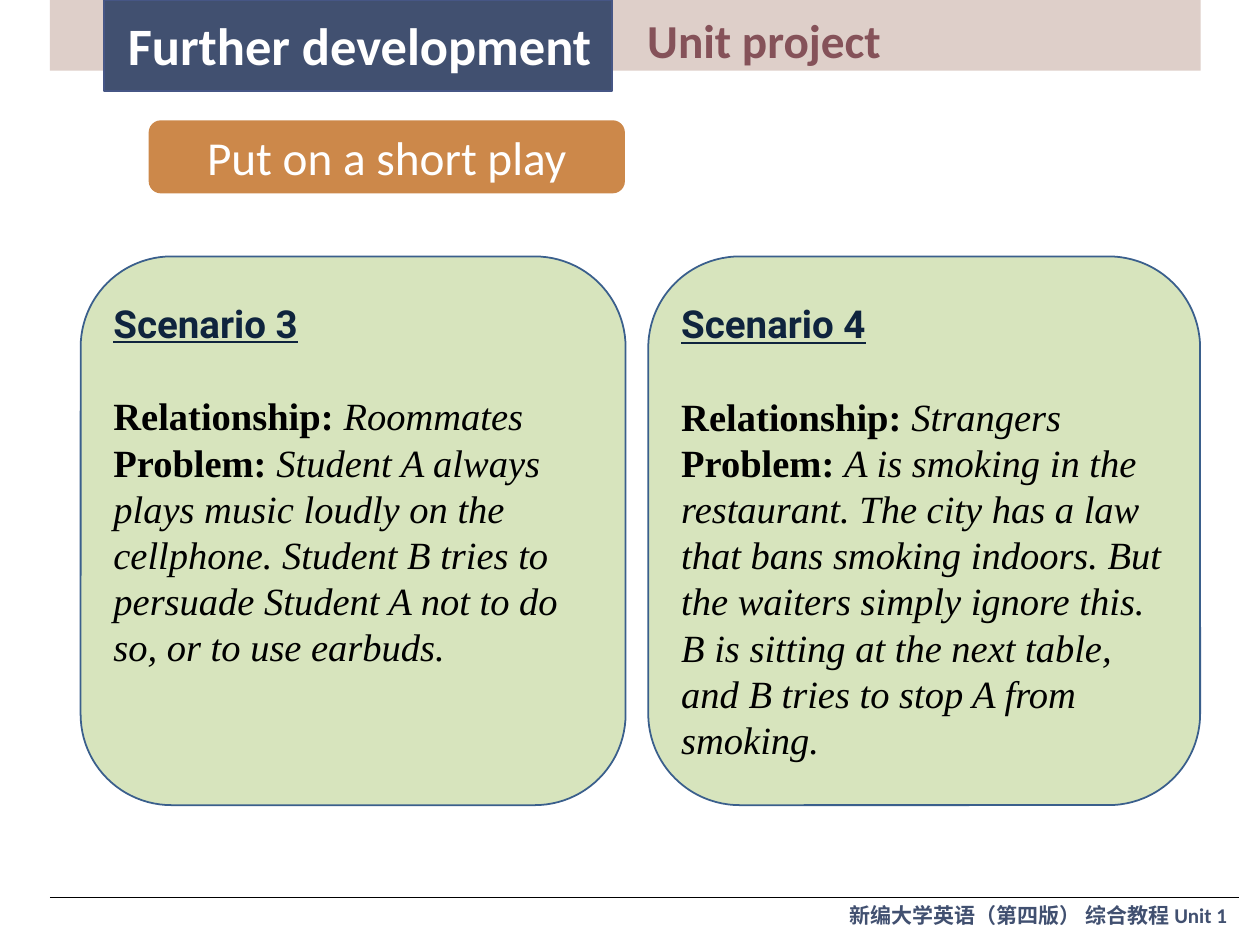
from pptx import Presentation
from pptx.dml.color import RGBColor
from pptx.enum.shapes import MSO_CONNECTOR, MSO_SHAPE
from pptx.enum.text import MSO_ANCHOR, PP_ALIGN
from pptx.util import Inches, Pt
from lxml import etree

RECT, ROUND = MSO_SHAPE.RECTANGLE, MSO_SHAPE.ROUNDED_RECTANGLE
LEFT, MID = PP_ALIGN.LEFT, PP_ALIGN.CENTER
TOP, CENTER = MSO_ANCHOR.TOP, MSO_ANCHOR.MIDDLE
LINE = MSO_CONNECTOR.STRAIGHT
HUES = {"band": "DECFC9", "navy": "415070", "edge": "465685", "white": "FFFFFF",
        "plum": "855259", "clay": "CC884A", "leaf": "D7E4BD", "rim": "3A5F8C",
        "ink": "0F243E", "black": "000000"}

# Slide on a grid of 200 columns by 150 rows
deck = Presentation()
deck.slide_width, deck.slide_height = Inches(20), Inches(15)
COL, ROW = deck.slide_width / 200, deck.slide_height / 150
slide = deck.slides.add_slide(deck.slide_layouts[5])
shapes = slide.shapes


def block(kind, x, y, w, h, fill, edge=None):
    part = shapes.add_shape(kind, int(x * COL), int(y * ROW), int(w * COL), int(h * ROW))
    part.shadow.inherit = False
    part.fill.solid()
    part.fill.fore_color.rgb = RGBColor.from_string(HUES[fill])
    if edge:
        part.line.color.rgb = RGBColor.from_string(HUES[edge])
        part.line.width = Pt(2)
    else:
        part.line.fill.background()
    return part


def write(para, text, size, face, hue, bold=False, slant=False, under=False):
    run = para.add_run()
    run.text = text
    font = run.font
    font.size, font.name = Pt(size), face
    font.bold, font.italic, font.underline = bold, slant, under
    font.color.rgb = RGBColor.from_string(HUES[hue])


# Header band and title
block(RECT, 7.9, 0, 182.7, 11.2, "band")
block(RECT, 16.5, 0, 80.7, 14.4, "navy", "edge")
title = shapes.title
title.left, title.top = int(19.3 * COL), int(1.5 * ROW)
title.width, title.height = int(77.9 * COL), int(11.1 * ROW)
title.element.getparent().append(title.element)
title.text_frame.vertical_anchor = TOP
head = title.text_frame.paragraphs[0]
head.alignment = LEFT
write(head, "Further development", 60, "Calibri", "white", bold=True)

# Section label and footer
labels = [
    (95.3, 1.3, 52, 10.1, MID, 54, "plum", [("Unit project", "Calibri")]),
    (133.9, 142.7, 65, 5, LEFT, 24, "navy",
     [("新编大学英语（第四版） 综合教程 ", "Arial"), ("Unit 1", "Calibri")]),
]
for x, y, w, h, align, size, hue, runs in labels:
    box = shapes.add_textbox(int(x * COL), int(y * ROW), int(w * COL), int(h * ROW))
    box.text_frame.word_wrap = True
    para = box.text_frame.paragraphs[0]
    para.alignment = align
    for text, face in runs:
        write(para, text, size, face, hue, bold=True)

# Footer rule
rule = shapes.add_connector(LINE, int(7.9 * COL), int(142.4 * ROW),
                            int(196.6 * COL), int(142.4 * ROW))
rule.line.color.rgb = RGBColor.from_string(HUES["black"])
rule.line.width = Pt(0.75)
etree.SubElement(rule.element.spPr,
                 "{http://schemas.openxmlformats.org/drawingml/2006/main}effectLst")

# Task label
task = block(ROUND, 23.6, 19.1, 75.6, 11.6, "clay").text_frame
task.vertical_anchor = CENTER
task.paragraphs[0].alignment = MID
write(task.paragraphs[0], "Put on a short play", 54, "Calibri", "white")

# Scenario cards
SIZE, PITCH = 44, Pt(52.8)
cards = [
    (12.8, 86.5, "Scenario 3", "Roommates",
     "Student A always plays music loudly on the cellphone. Student B tries to "
     "persuade Student A not to do so, or to use earbuds."),
    (102.9, 87.6, "Scenario 4", "Strangers",
     "A is smoking in the restaurant. The city has a law that bans smoking indoors. "
     "But the waiters simply ignore this. B is sitting at the next table, and B tries "
     "to stop A from smoking."),
]
for x, w, name, bond, issue in cards:
    frame = block(ROUND, x, 40.7, w, 87.1, "leaf", "rim").text_frame
    frame.word_wrap = True
    frame.vertical_anchor = TOP
    frame.margin_top = int(2.7 * ROW)
    para = frame.paragraphs[0]
    para.alignment, para.line_spacing, para.space_after = LEFT, PITCH, PITCH
    write(para, name, SIZE, "Roboto", "ink", bold=True, under=True)
    for key, text in (("Relationship: ", bond), ("Problem: ", issue)):
        para = frame.add_paragraph()
        para.alignment, para.line_spacing = LEFT, PITCH
        write(para, key, SIZE, "Times New Roman", "black", bold=True)
        write(para, text, SIZE, "Times New Roman", "black", slant=True)

deck.save("out.pptx")
